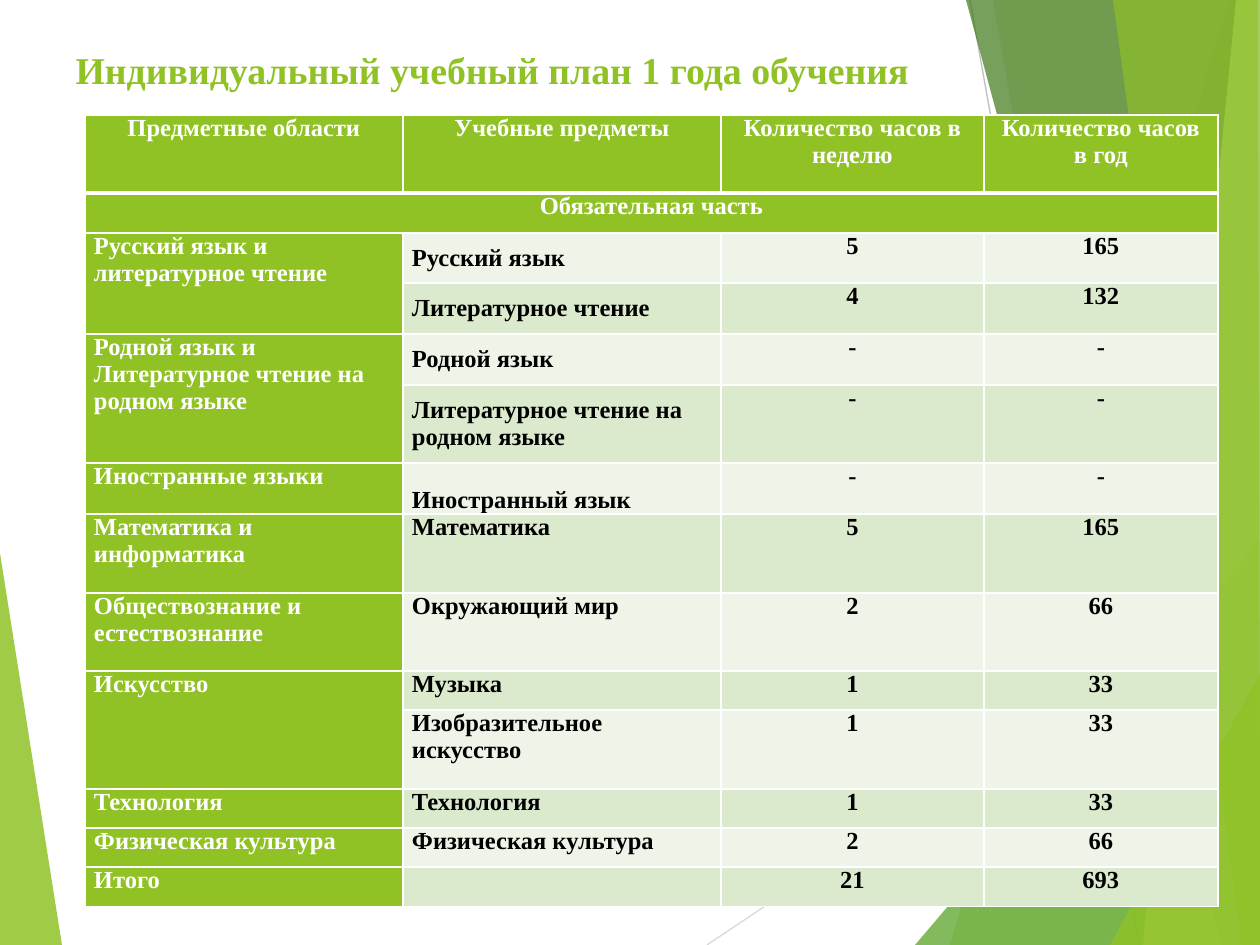
import pptx
import pptx.dml.color
import pptx.enum.shapes
import pptx.enum.text
import pptx.oxml
import pptx.oxml.ns
import pptx.util

PX = 914400 // 126
FONT = "Times New Roman"
GREEN, PALE, LIGHT, WHITE, BLACK = "90C226", "EEF4E8", "DBE9CD", "FFFFFF", "000000"
TITLE = "Индивидуальный учебный план 1 года обучения"

LINES = [
    ((707, 945), (1260, 576), "D9D9D9"),
    ((970, 0), (1139, 945), "BFBFBF"),
]
LEFT_FACET = ([(0, 553), (62, 945), (0, 945)], GREEN, 85)
RIGHT_FACETS = [
    ([(1229, 0), (950, 945), (1260, 945), (1260, 0)], GREEN, 30),
    ([(993, 0), (1158, 945), (1260, 945), (1260, 0)], GREEN, 20),
    ([(915, 945), (1260, 540), (1260, 945)], "54A021", 72),
    ([(966, 0), (1222, 945), (1260, 945), (1260, 0)], "3F7819", 70),
    ([(1236, 0), (1143, 945), (1260, 945), (1260, 0)], "C0E474", 70),
    ([(1113, 0), (1242, 945), (1260, 945), (1258, 0)], GREEN, 65),
    ([(1110, 945), (1260, 674), (1260, 945)], GREEN, 80),
]

TABLE_LEFT, TABLE_TOP = 85, 115
COLUMN_WIDTHS = [318, 318, 263, 234]
# Row height, then the four cells; None continues the cell above or to the left.
ROWS = [
    (78, "Предметные области", "Учебные предметы", "Количество часов в неделю", "Количество часов в год"),
    (40, "Обязательная часть", None, None, None),
    (50, "Русский язык и литературное чтение", "Русский язык", "5", "165"),
    (51, None, "Литературное чтение", "4", "132"),
    (51, "Родной язык и Литературное чтение на родном языке", "Родной язык", "-", "-"),
    (78, None, "Литературное чтение на родном языке", "-", "-"),
    (51, "Иностранные языки", "Иностранный язык", "-", "-"),
    (79, "Математика и информатика", "Математика", "5", "165"),
    (78, "Обществознание и естествознание", "Окружающий мир", "2", "66"),
    (39, "Искусство", "Музыка", "1", "33"),
    (79, None, "Изобразительное искусство", "1", "33"),
    (39, "Технология", "Технология", "1", "33"),
    (39, "Физическая культура", "Физическая культура", "2", "66"),
    (40, "Итого", "", "21", "693"),
]
HEADER_ROWS = 2
MIDDLE_ROWS = range(2, 6)
BOTTOM_ROW = 6


def rgb(color):
    return pptx.dml.color.RGBColor.from_string(color)


def add_line(page, start, end, color):
    line = page.shapes.add_connector(
        pptx.enum.shapes.MSO_CONNECTOR.STRAIGHT, *(v * PX for v in start + end))
    line.line.color.rgb = rgb(color)
    line.line.width = pptx.util.Pt(0.75)
    line.element.spPr.append(pptx.oxml.parse_xml(
        f'<a:effectLst {pptx.oxml.ns.nsdecls("a")}/>'))


def add_facet(page, points, color, opacity):
    builder = page.shapes.build_freeform(*points[0], scale=PX)
    builder.add_line_segments(points[1:], close=True)
    facet = builder.convert_to_shape()
    facet.shadow.inherit = False
    facet.line.fill.background()
    facet.fill.solid()
    facet.fill.fore_color.rgb = rgb(color)
    color_node = facet.element.spPr.find(".//" + pptx.oxml.ns.qn("a:srgbClr"))
    color_node.append(pptx.oxml.parse_xml(
        f'<a:alpha {pptx.oxml.ns.nsdecls("a")} val="{opacity * 1000}"/>'))


def format_text(frame, size, color, align):
    for para in frame.paragraphs:
        para.alignment = align
        for span in para.runs:
            span.font.name = FONT
            span.font.size = pptx.util.Pt(size)
            span.font.bold = True
            span.font.color.rgb = rgb(color)


def set_borders(cell, top, bottom):
    """Draw white borders, one point wide at the sides."""
    properties = cell._tc.get_or_add_tcPr()
    widths = {"lnL": 1, "lnR": 1, "lnT": top, "lnB": bottom}
    for place, (tag, width) in enumerate(widths.items()):
        properties.insert(place, pptx.oxml.parse_xml(
            f'<a:{tag} {pptx.oxml.ns.nsdecls("a")} w="{pptx.util.Pt(width)}">'
            f'<a:solidFill><a:srgbClr val="{WHITE}"/></a:solidFill></a:{tag}>'))


def format_cell(cell, row, column):
    align = pptx.enum.text.PP_ALIGN
    anchor = pptx.enum.text.MSO_ANCHOR
    is_green = row < HEADER_ROWS or column == 0
    is_centred = row < HEADER_ROWS or column > 1
    cell.margin_left = cell.margin_right = 9 * PX
    cell.margin_top = cell.margin_bottom = 0
    cell.vertical_anchor = anchor.TOP
    if column == 1 and row in MIDDLE_ROWS:
        cell.vertical_anchor = anchor.MIDDLE
    elif column == 1 and row == BOTTOM_ROW:
        cell.vertical_anchor = anchor.BOTTOM
    format_text(cell.text_frame, 14, WHITE if is_green else BLACK,
                align.CENTER if is_centred else align.LEFT)
    cell.fill.solid()
    cell.fill.fore_color.rgb = rgb(GREEN if is_green else (LIGHT if row % 2 else PALE))
    set_borders(cell, 3 if row == 1 else 1, 3 if row == 0 else 1)


def add_plan(page):
    heights = [row[0] for row in ROWS]
    table = page.shapes.add_table(
        len(ROWS), len(COLUMN_WIDTHS), TABLE_LEFT * PX, TABLE_TOP * PX,
        sum(COLUMN_WIDTHS) * PX, sum(heights) * PX).table
    table.first_row = table.horz_banding = False
    for column, width in zip(table.columns, COLUMN_WIDTHS):
        column.width = width * PX
    for row, (height, *texts) in enumerate(ROWS):
        table.rows[row].height = height * PX
        for column, text in enumerate(texts):
            cell = table.cell(row, column)
            if text:
                cell.text_frame.text = text
            format_cell(cell, row, column)
        if texts[0] is None:
            table.cell(row - 1, 0).merge(table.cell(row, 0))
        elif texts[-1] is None:
            table.cell(row, 0).merge(table.cell(row, len(texts) - 1))


def add_title(page):
    title = page.shapes.title
    title.element.getparent().append(title.element)
    title.left, title.top, title.width, title.height = (v * PX for v in (63, 38, 1134, 63))
    title.text_frame.text = TITLE
    title.text_frame.vertical_anchor = pptx.enum.text.MSO_ANCHOR.MIDDLE
    format_text(title.text_frame, 21.6, GREEN, pptx.enum.text.PP_ALIGN.LEFT)


def main():
    deck = pptx.Presentation()
    deck.slide_width, deck.slide_height = 1260 * PX, 945 * PX
    page = deck.slides.add_slide(deck.slide_layouts[5])
    add_facet(page, *LEFT_FACET)
    for line in LINES:
        add_line(page, *line)
    for facet in RIGHT_FACETS:
        add_facet(page, *facet)
    add_title(page)
    add_plan(page)
    deck.save("out.pptx")


if __name__ == "__main__":
    main()
